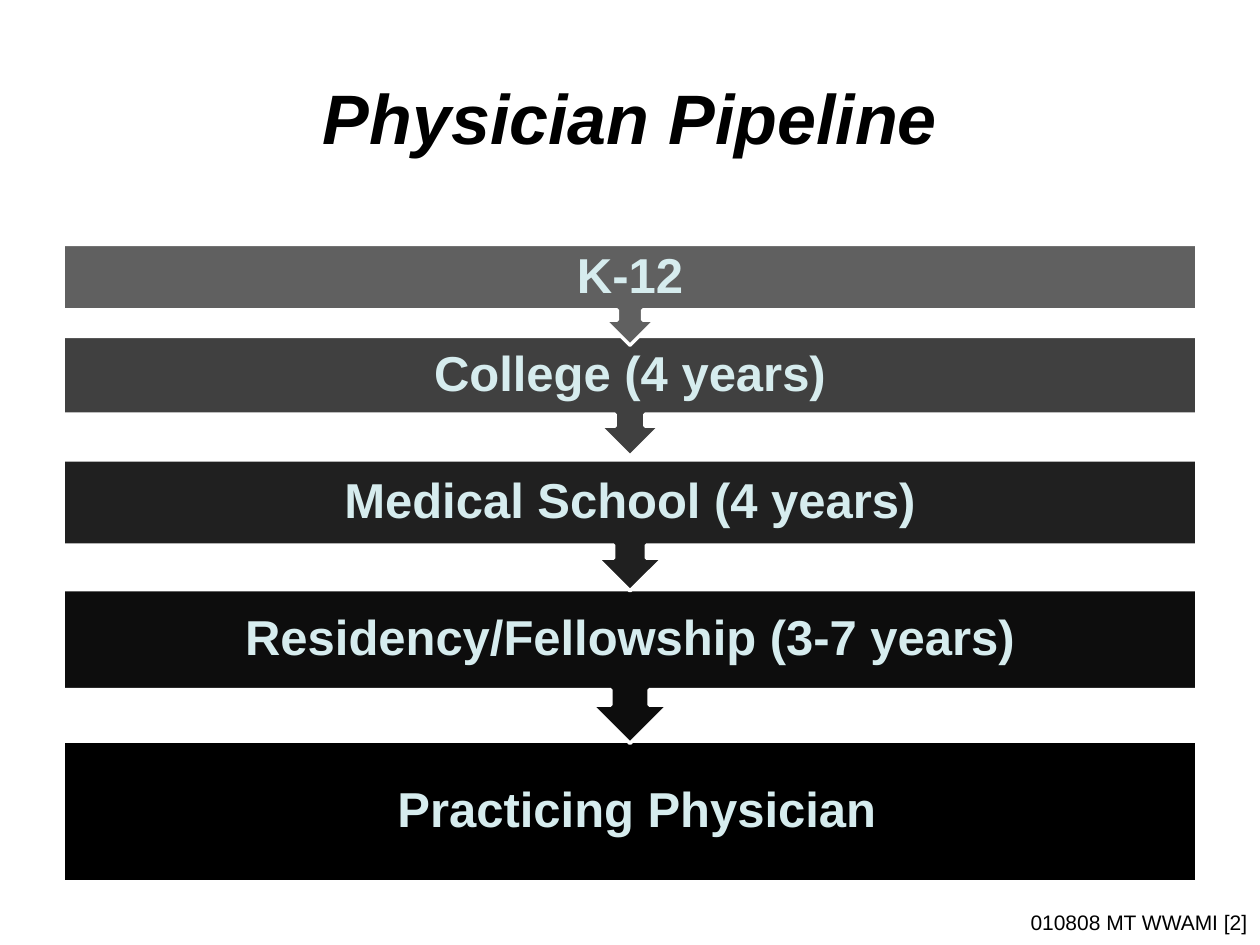
from dataclasses import dataclass

from pptx import Presentation
from pptx.dml.color import RGBColor
from pptx.enum.shapes import MSO_SHAPE
from pptx.enum.text import MSO_ANCHOR, PP_ALIGN
from pptx.util import Inches, Pt


@dataclass(frozen=True)
class Theme:
    """Colours, font and type sizes of the slide."""

    font: str = "Arial"
    ink: str = "000000"
    paper: str = "FFFFFF"
    label: str = "D6ECEE"
    title_size: int = 40
    label_size: int = 28
    footer_size: int = 12
    outline: int = 2


THEME = Theme()
LEFT, WIDTH = 0.5, 9
BOX_SHARE = 0.65
STAGES = [
    ("K-12", 1.94, 0.8, "606060"),
    ("College (4 years)", 2.67, 0.95, "404040"),
    ("Medical School (4 years)", 3.65, 1.04, "202020"),
    ("Residency/Fellowship (3-7 years)", 4.68, 1.22, "0D0D0D"),
    (" Practicing Physician", 5.88, 1.12, "000000"),
]


def apply(target, values):
    """Set each named attribute on the target."""
    for name, value in values.items():
        setattr(target, name, value)


def write(box, text, size, color, align, frame=None, spacing=None, **style):
    """Write one formatted paragraph into a box."""
    apply(box.text_frame, {"word_wrap": True, **(frame or {})})
    para = box.text_frame.paragraphs[0]
    apply(para, {"alignment": align, "line_spacing": spacing})
    span = para.add_run()
    span.text = text
    apply(span.font, {"name": THEME.font, "size": Pt(size), **style})
    span.font.color.rgb = RGBColor.from_string(color)


def add_title(page, text):
    """Place and fill the title placeholder."""
    title = page.shapes.title
    apply(title, {"left": Inches(0.5), "top": Inches(0.3),
                  "width": Inches(9), "height": Inches(1.25)})
    write(title, text, THEME.title_size, THEME.ink, PP_ALIGN.CENTER,
          {"vertical_anchor": MSO_ANCHOR.MIDDLE}, bold=True, italic=True)


def add_block(page, kind, top, height, color):
    """Draw a full-width outlined block of the pipeline."""
    block = page.shapes.add_shape(
        kind, Inches(LEFT), Inches(top), Inches(WIDTH), Inches(height))
    block.shadow.inherit = False
    block.fill.solid()
    block.fill.fore_color.rgb = RGBColor.from_string(color)
    block.line.color.rgb = RGBColor.from_string(THEME.paper)
    block.line.width = Pt(THEME.outline)
    return block


def add_label(page, text, top, height, inset):
    """Lay a centred stage label over its block."""
    box = page.shapes.add_textbox(
        Inches(LEFT), Inches(top), Inches(WIDTH), Inches(height))
    frame = {f"margin_{side}": Inches(inset)
             for side in ("left", "top", "right", "bottom")}
    frame["vertical_anchor"] = MSO_ANCHOR.MIDDLE
    write(box, text, THEME.label_size, THEME.label, PP_ALIGN.CENTER,
          frame, 0.9, bold=True)


def add_final_stage(page, text, top, height, color):
    """Add the plain block that ends the pipeline."""
    add_block(page, MSO_SHAPE.RECTANGLE, top, height, color)
    add_label(page, text, top, height, 0.19)


def add_stage(page, text, top, height, color):
    """Add a block whose arrow points down to the next stage."""
    block = add_block(page, MSO_SHAPE.UP_ARROW_CALLOUT, top, height, color)
    block.rotation = 180
    add_label(page, text, top, height * BOX_SHARE, 0.22)


def add_footer(page, text):
    """Add the reference line at the bottom right."""
    box = page.shapes.add_textbox(
        Inches(6.67), Inches(7.17), Inches(3.33), Inches(0.3))
    write(box, text, THEME.footer_size, THEME.ink, PP_ALIGN.RIGHT)


def main():
    """Build and save the slide."""
    deck = Presentation()
    apply(deck, {"slide_width": Inches(10), "slide_height": Inches(7.5)})
    page = deck.slides.add_slide(deck.slide_layouts.get_by_name("Title Only"))
    add_footer(page, "010808 MT WWAMI [2]")
    add_title(page, "Physician Pipeline")
    add_final_stage(page, *STAGES[-1])
    for stage in reversed(STAGES[:-1]):
        add_stage(page, *stage)
    deck.save("out.pptx")


if __name__ == "__main__":
    main()
